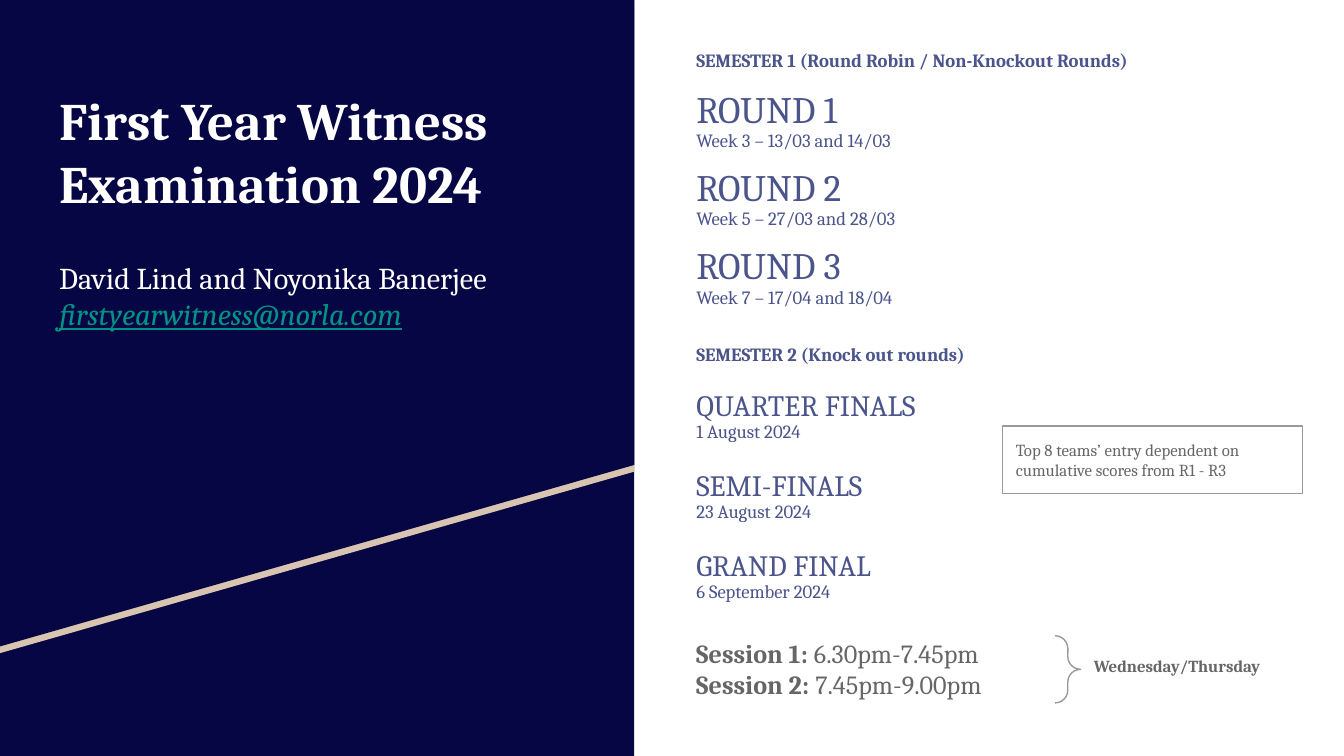
from pptx import Presentation
from pptx.dml.color import RGBColor
from pptx.enum import shapes, text
from pptx.util import Pt

NAVY = RGBColor(0x06, 0x06, 0x44)
SAND = RGBColor(0xD9, 0xC4, 0xB1)
WHITE = RGBColor(0xFF, 0xFF, 0xFF)
TEAL = RGBColor(0x00, 0x93, 0x84)
INDIGO = RGBColor(0x4B, 0x54, 0x8B)
GREY = RGBColor(0x66, 0x66, 0x66)
RULE = RGBColor(0x99, 0x99, 0x99)
FONT = "Cambria"


def place(shape, box):
    for side, length in zip(("left", "top", "width", "height"), box):
        setattr(shape, side, Pt(length))


def prepare_frame(shape, auto_size=text.MSO_AUTO_SIZE.NONE):
    frame = shape.text_frame
    inset = Pt(7.2)
    settings = {
        "word_wrap": True, "auto_size": auto_size,
        "vertical_anchor": text.MSO_ANCHOR.TOP,
        "margin_left": inset, "margin_right": inset,
        "margin_top": inset, "margin_bottom": inset,
    }
    for name, value in settings.items():
        setattr(frame, name, value)
    return frame


def add_run(paragraph, words, size, color, **style):
    run = paragraph.add_run()
    run.text = words
    run.font.color.rgb = color
    settings = {"name": FONT, "size": Pt(size), "bold": False, **style}
    for name, value in settings.items():
        setattr(run.font, name, value)


def fill_lines(frame, lines):
    """Each line is (runs, line spacing, space before); a run is (words, size, color, style)."""
    for number, (runs, spacing, before) in enumerate(lines):
        paragraph = frame.add_paragraph() if number else frame.paragraphs[0]
        settings = {
            "alignment": text.PP_ALIGN.LEFT, "line_spacing": spacing,
            "space_before": Pt(before), "space_after": Pt(0),
        }
        for name, value in settings.items():
            setattr(paragraph, name, value)
        for words, size, color, style in runs:
            add_run(paragraph, words, size, color, **style)


def paint(shape, fill=None, line=None):
    shape.shadow.inherit = False
    if fill is None:
        shape.fill.background()
    else:
        shape.fill.solid()
        shape.fill.fore_color.rgb = fill
    if line is None:
        shape.line.fill.background()
    else:
        shape.line.color.rgb = line
        shape.line.width = Pt(0.75)


def add_title_panel(slide, box):
    left, top, width, height = box
    panel = slide.shapes.add_shape(shapes.MSO_SHAPE.RECTANGLE, *map(Pt, box))
    paint(panel, NAVY)

    # Slanted layers: the lower one shows as a thin diagonal band
    for drop, color in ((3.6, SAND), (0, NAVY)):
        y = top + drop
        corners = [(left, y), (left + width, y),
                   (left + width, y + 249.1), (left, y + 346.3)]
        points = [(Pt(px), Pt(py)) for px, py in corners]
        outline = slide.shapes.build_freeform(*points[0])
        outline.add_line_segments(points[1:], close=True)
        paint(outline.convert_to_shape(), color)

    # Title and contacts, brought in front of the panel
    title = slide.shapes.title
    place(title, (left + 24.5, top + 39.6, 291.6, 197.3))
    fill_lines(prepare_frame(title), [
        ([("First Year Witness Examination 2024", 28.2, WHITE, {"bold": True})], 1.0, 0),
        ([("David Lind and Noyonika Banerjee", 16.2, WHITE, {})], 1.0, 24.5),
        ([("firstyearwitness@norla.com", 16.2, TEAL,
           {"italic": True, "underline": True})], 1.0, 0),
    ])
    slide.shapes._spTree.append(title._element)


def add_schedule(slide, box):
    semesters = [
        ("SEMESTER 1 (Round Robin / Non-Knockout Rounds)", 0, 20, 0.9, 9.5, [
            ("ROUND 1", "Week 3 – 13/03 and 14/03"),
            ("ROUND 2", "Week 5 – 27/03 and 28/03"),
            ("ROUND 3", "Week 7 – 17/04 and 18/04")]),
        ("SEMESTER 2 (Knock out rounds)", 20.1, 15.8, 1.05, 12, [
            ("QUARTER FINALS", "1 August 2024"),
            ("SEMI-FINALS", "23 August 2024"),
            ("GRAND FINAL", "6 September 2024")]),
    ]
    lines = []
    for heading, before, size, spacing, gap, stages in semesters:
        lines.append(([(heading, 10, INDIGO, {"bold": True})], 0.9, before))
        for number, (stage, date) in enumerate(stages):
            lines.append(([(stage, size, INDIGO, {})], spacing, gap if number else 10.6))
            lines.append(([(date, 10, INDIGO, {})], 0.9, 0))

    schedule = slide.placeholders[1]
    place(schedule, box)
    frame = prepare_frame(schedule)
    fill_lines(frame, lines)
    # No bullets or hanging indent
    for paragraph in frame.paragraphs:
        properties = paragraph._p.get_or_add_pPr()
        properties.set("marL", "0")
        properties.set("indent", "0")
        properties.append(properties.makeelement(
            "{http://schemas.openxmlformats.org/drawingml/2006/main}buNone", {}))
    slide.shapes._spTree.append(schedule._element)


def add_entry_note(slide, box):
    note = slide.shapes.add_shape(shapes.MSO_SHAPE.RECTANGLE, *map(Pt, box))
    paint(note, line=RULE)
    fill_lines(prepare_frame(note, text.MSO_AUTO_SIZE.SHAPE_TO_FIT_TEXT), [
        ([("Top 8 teams’ entry dependent on cumulative scores from R1 - R3",
           9, GREY, {})], 1.0, 0)])


def add_sessions(slide, box):
    left, top, width, height = box
    fit = text.MSO_AUTO_SIZE.SHAPE_TO_FIT_TEXT

    # Session times
    times = slide.shapes.add_textbox(*map(Pt, box))
    fill_lines(prepare_frame(times, fit), [
        ([(f"{session}:", 14, GREY, {"bold": True}), (f" {hours}", 14, GREY, {})], 1.0, 0)
        for session, hours in (("Session 1", "6.30pm-7.45pm"),
                               ("Session 2", "7.45pm-9.00pm"))])

    # Brace and the days it stands for
    brace = slide.shapes.add_shape(shapes.MSO_SHAPE.RIGHT_BRACE, Pt(left + 199.4),
                                   Pt(top + 6.5), Pt(13.7), Pt(36))
    brace.adjustments[0] = brace.adjustments[1] = 0.5
    paint(brace, line=RULE)
    days = slide.shapes.add_textbox(Pt(left + 213.1), Pt(top + 11.5), Pt(121.7), Pt(25.2))
    fill_lines(prepare_frame(days, fit), [
        ([("Wednesday/Thursday", 9, GREY, {"bold": True})], 1.0, 0)])


def main():
    deck = Presentation()
    deck.slide_width, deck.slide_height = Pt(720), Pt(405)
    slide = deck.slides.add_slide(deck.slide_layouts[1])
    add_title_panel(slide, (0, 0, 339.8, 405))
    add_schedule(slide, (365.8, 20.2, 328.3, 338.4))
    add_entry_note(slide, (537.1, 228.3, 160.6, 36))
    add_sessions(slide, (365.8, 334.1, 279.4, 65.5))
    deck.save("out.pptx")


if __name__ == "__main__":
    main()
